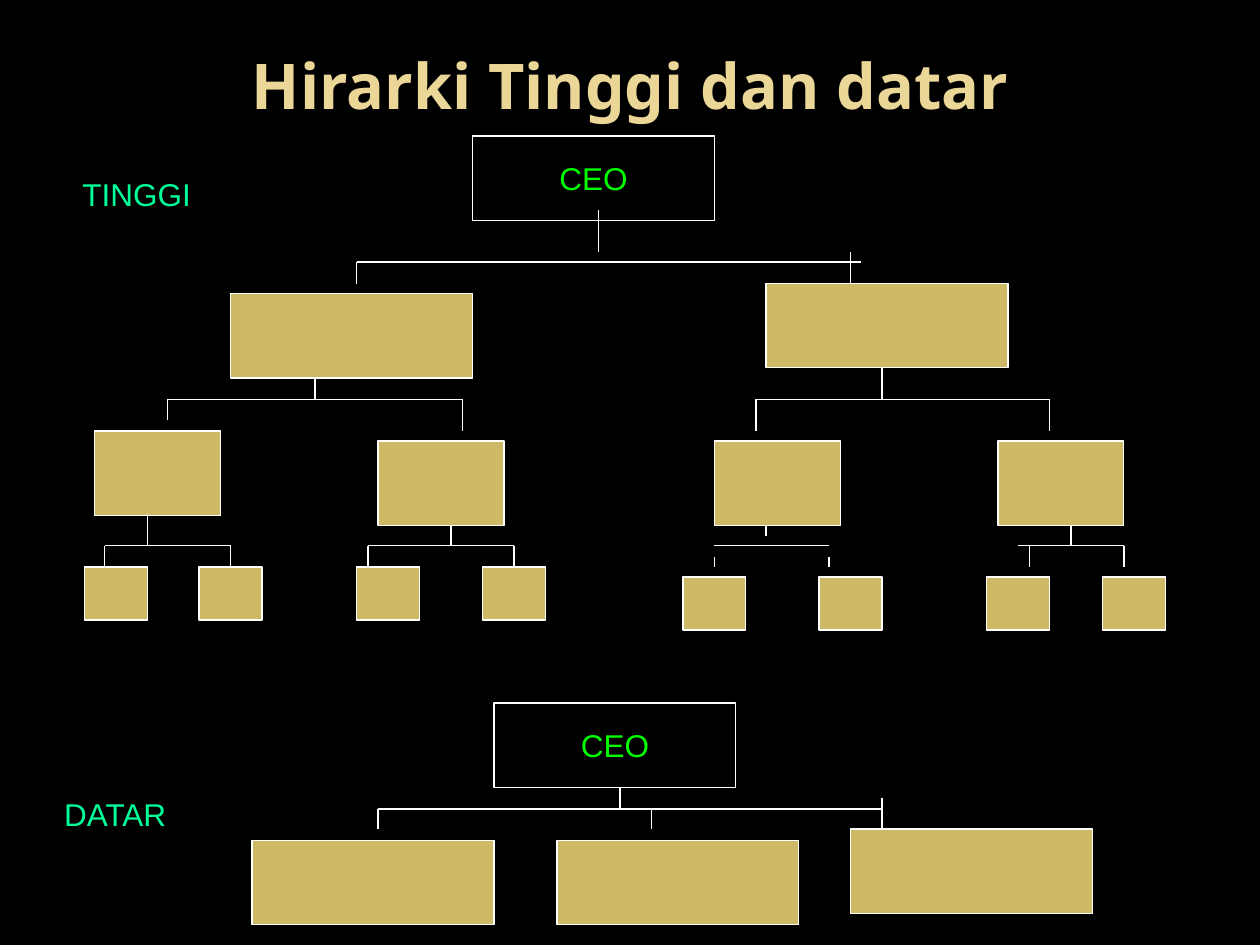
from lxml import etree
from pptx import Presentation
from pptx.dml.color import RGBColor
from pptx.enum.shapes import MSO_CONNECTOR, MSO_SHAPE
from pptx.enum.text import MSO_ANCHOR, PP_ALIGN
from pptx.oxml.ns import qn
from pptx.util import Inches, Pt

RECT = MSO_SHAPE.RECTANGLE
STRAIGHT = MSO_CONNECTOR.STRAIGHT
MIDDLE = MSO_ANCHOR.MIDDLE
CENTER = PP_ALIGN.CENTER

BLACK, WHITE, GOLD = "000000", "FFFFFF", "CEB966"
CREAM, GREEN, MINT = "EAD696", "00FF00", "00FF99"
WIDE, MEDIUM, SMALL = (1.92, 0.67), (1, 0.67), (0.5, 0.42)

MANAGERS = [(1.83, 2.33), (6.08, 2.25)]
SUPERVISORS = [(0.75, 3.42), (3, 3.5), (5.67, 3.5), (7.92, 3.5)]
STAFF = [(0.67, 4.5), (1.58, 4.5), (2.83, 4.5), (3.83, 4.5),
         (5.42, 4.58), (6.5, 4.58), (7.83, 4.58), (8.75, 4.58)]
FLAT_STAFF = [(2, 6.67), (6.75, 6.58), (4.42, 6.67)]

# Each branch: bar height, bar ends, then vertical lines as (x, top, bottom)
TALL_BRANCHES = [
    (2.08, (2.83, 6.83), [(2.83, 2.08, 2.25), (4.75, 1.67, 2), (6.75, 2, 2.25)]),
    (3.17, (1.33, 3.67), [(1.33, 3.17, 3.33), (3.67, 3.17, 3.42), (2.5, 3, 3.17)]),
    (3.17, (6, 8.33), [(6, 3.17, 3.42), (8.33, 3.17, 3.42), (7, 2.92, 3.17)]),
    (4.33, (0.83, 1.83), [(0.83, 4.33, 4.5), (1.83, 4.33, 4.5), (1.17, 4.08, 4.33)]),
    (4.33, (2.92, 4.08), [(2.92, 4.33, 4.5), (4.08, 4.33, 4.5), (3.58, 4.17, 4.33)]),
]
FLAT_BRANCH = (6.42, (3, 7), [(3, 6.42, 6.58), (4.92, 6.25, 6.42),
                              (7, 6.33, 6.58), (5.17, 6.42, 6.58)])
LOOSE_BRANCHES = [
    (4.33, (5.67, 6.58), [(5.67, 4.42, 4.5), (6.58, 4.42, 4.5), (6.08, 4.17, 4.25)]),
    (4.33, (8.08, 8.92), [(8.17, 4.33, 4.5), (8.92, 4.33, 4.5), (8.5, 4.17, 4.33)]),
]


def rgb(color):
    return RGBColor.from_string(color)


def write(sp, text, size=18, font="Arial", color=GREEN, bold=False, wrap=False):
    tf = sp.text_frame
    tf.word_wrap = wrap
    tf.vertical_anchor = MIDDLE
    p = tf.paragraphs[0]
    p.alignment = CENTER
    r = p.add_run()
    r.text = text
    r.font.size = Pt(size)
    r.font.name = font
    r.font.bold = bold
    r.font.color.rgb = rgb(color)


def add_label(shapes, text, left, top, width, height, **fmt):
    sp = shapes.add_textbox(*map(Inches, (left, top, width, height)))
    write(sp, text, **fmt)


def add_box(shapes, left, top, size, fill=GOLD):
    sp = shapes.add_shape(RECT, *map(Inches, (left, top, *size)))
    sp.shadow.inherit = False
    sp.fill.solid()
    sp.fill.fore_color.rgb = rgb(fill)
    sp.line.color.rgb = rgb(WHITE)
    sp.line.width = Pt(0.75)
    return sp


def add_boxes(shapes, places, size):
    for left, top in places:
        add_box(shapes, left, top, size)


def add_line(shapes, x1, y1, x2, y2):
    line = shapes.add_connector(STRAIGHT, *map(Inches, (x1, y1, x2, y2)))
    line.line.color.rgb = rgb(WHITE)
    line.line.width = Pt(0.75)
    etree.SubElement(line._element.spPr, qn("a:effectLst"))


def add_branch(shapes, y, ends, verticals):
    add_line(shapes, ends[0], y, ends[1], y)
    for x, top, bottom in verticals:
        add_line(shapes, x, top, x, bottom)


def add_tall_chart(shapes):
    write(add_box(shapes, 3.75, 1.08, WIDE, BLACK), "CEO")
    add_boxes(shapes, MANAGERS, WIDE)
    add_boxes(shapes, SUPERVISORS, MEDIUM)
    add_boxes(shapes, STAFF, SMALL)
    for branch in TALL_BRANCHES:
        add_branch(shapes, *branch)


def add_flat_chart(shapes):
    write(add_box(shapes, 3.92, 5.58, WIDE, BLACK), "CEO")
    add_boxes(shapes, FLAT_STAFF, WIDE)
    add_branch(shapes, *FLAT_BRANCH)


def main():
    prs = Presentation()
    prs.slide_width, prs.slide_height = Inches(10), Inches(7.5)
    s = prs.slides.add_slide(prs.slide_layouts[6])
    s.background.fill.solid()
    s.background.fill.fore_color.rgb = rgb(BLACK)

    add_label(s.shapes, "Hirarki Tinggi dan datar", 0.75, 0.33, 8.5, 0.68,
              size=36, font="Noto Sans", color=CREAM, bold=True, wrap=True)
    add_tall_chart(s.shapes.add_group_shape().shapes)
    add_flat_chart(s.shapes.add_group_shape().shapes)
    add_label(s.shapes, "DATAR", 0.25, 6.17, 1.33, 0.58, color=MINT)
    add_label(s.shapes, "TINGGI", 0.42, 1.25, 1.33, 0.58, color=MINT)
    for branch in LOOSE_BRANCHES:
        add_branch(s.shapes, *branch)

    prs.save("out.pptx")


if __name__ == "__main__":
    main()
